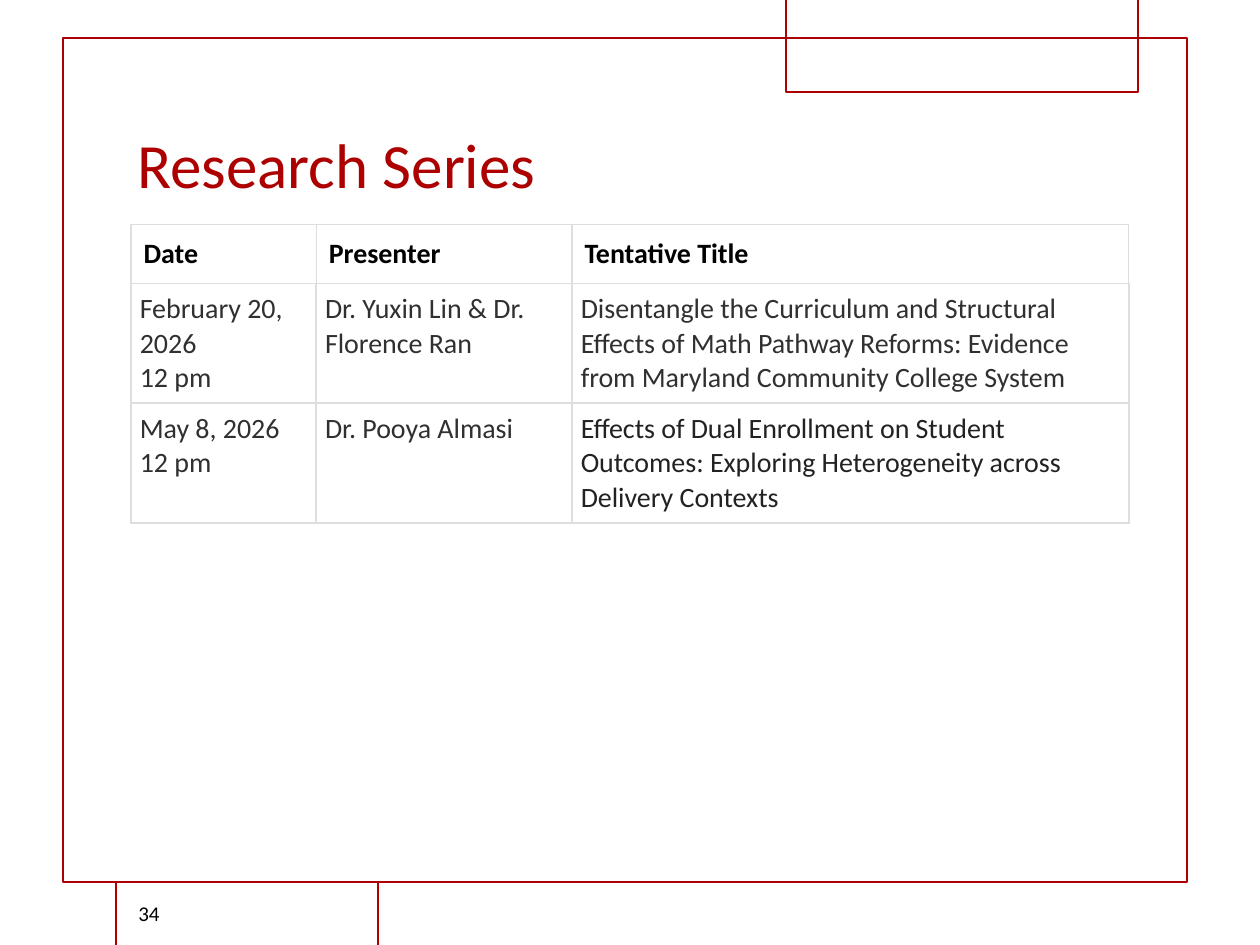
from lxml import etree
from pptx import Presentation
from pptx.dml.color import RGBColor
from pptx.enum.shapes import MSO_SHAPE
from pptx.enum.text import MSO_ANCHOR, MSO_AUTO_SIZE, PP_ALIGN
from pptx.oxml.ns import qn
from pptx.util import Inches, Pt

RECTANGLE = MSO_SHAPE.RECTANGLE
BOTTOM, MIDDLE, TOP = MSO_ANCHOR.BOTTOM, MSO_ANCHOR.MIDDLE, MSO_ANCHOR.TOP
NO_AUTOFIT = MSO_AUTO_SIZE.NONE
LEFT = PP_ALIGN.LEFT
TITLE_ONLY_LAYOUT = 5

FONT = "Calibri"
RED = RGBColor(0xAD, 0x01, 0x01)
WHITE = RGBColor(0xFF, 0xFF, 0xFF)
BLACK = RGBColor(0x00, 0x00, 0x00)
DARK_GRAY = RGBColor(0x30, 0x30, 0x30)
NEAR_BLACK = RGBColor(0x22, 0x22, 0x22)
BORDER_GRAY = RGBColor(0xDE, 0xDE, 0xE0)

COLUMN_WIDTHS = (1.47, 2.03, 4.42)
ROW_HEIGHTS = (0.47, 0.95, 0.95)
HEADERS = ("Date", "Presenter", "Tentative Title")
TALKS = (
    (
        "February 20, 2026\n12 pm",
        "Dr. Yuxin Lin & Dr. Florence Ran",
        "Disentangle the Curriculum and Structural Effects of Math Pathway Reforms: "
        "Evidence from Maryland Community College System",
    ),
    (
        "May 8, 2026\n12 pm",
        "Dr. Pooya Almasi",
        "Effects of Dual Enrollment on Student Outcomes: "
        "Exploring Heterogeneity across Delivery Contexts",
    ),
)


def write_text(text_frame, text, size=16, color=BLACK, bold=False, anchor=None):
    """Fill a text frame with one paragraph per line of text."""
    text_frame.text = text
    text_frame.word_wrap = True
    if anchor is not None:
        text_frame.vertical_anchor = anchor
    for paragraph in text_frame.paragraphs:
        paragraph.alignment = LEFT
        font = paragraph.font
        font.name, font.size, font.bold = FONT, Pt(size), bold
        font.color.rgb = color


def add_frame(slide, left, top, width, height, fill=None):
    """Draw one red-outlined rectangle of the page frame."""
    shape = slide.shapes.add_shape(
        RECTANGLE, Inches(left), Inches(top), Inches(width), Inches(height)
    )
    shape.shadow.inherit = False
    shape.line.color.rgb = RED
    shape.line.width = Pt(1.25)
    if fill is None:
        shape.fill.background()
    else:
        shape.fill.solid()
        shape.fill.fore_color.rgb = fill


def place_title(slide, left, top, width, height):
    """Format the title placeholder and bring it in front of the frame."""
    title = slide.shapes.title
    title.left, title.top = Inches(left), Inches(top)
    title.width, title.height = Inches(width), Inches(height)
    write_text(title.text_frame, "Research Series", size=36, color=RED, anchor=BOTTOM)
    title.text_frame.auto_size = NO_AUTOFIT
    title.element.getparent().append(title.element)


def add_page_number(slide, left, top, width, height):
    """Add the page number at the foot of the slide."""
    box = slide.shapes.add_textbox(
        Inches(left), Inches(top), Inches(width), Inches(height)
    )
    write_text(box.text_frame, "34", size=12, anchor=MIDDLE)


def set_borders(cell, width):
    """Give a table cell a thin gray border on every side."""
    properties = cell._tc.get_or_add_tcPr()
    for side in ("a:lnL", "a:lnR", "a:lnT", "a:lnB"):
        line = etree.SubElement(properties, qn(side), w=str(Pt(width)))
        fill = etree.SubElement(line, qn("a:solidFill"))
        etree.SubElement(fill, qn("a:srgbClr"), val=str(BORDER_GRAY))


def format_cell(cell, text, margin, border, **text_format):
    """Write a cell and set its margins, borders and fill."""
    write_text(cell.text_frame, text, **text_format)
    cell.vertical_anchor = TOP
    cell.margin_left = cell.margin_right = Inches(margin)
    cell.margin_top = cell.margin_bottom = Inches(margin)
    set_borders(cell, border)
    cell.fill.solid()
    cell.fill.fore_color.rgb = WHITE


def add_schedule(slide, left, top):
    """Add the table of talks with its top left corner at the given place."""
    table = slide.shapes.add_table(
        len(ROW_HEIGHTS), len(COLUMN_WIDTHS), Inches(left), Inches(top),
        Inches(sum(COLUMN_WIDTHS)), Inches(sum(ROW_HEIGHTS)),
    ).table
    table.horz_banding = False
    for column, width in zip(table.columns, COLUMN_WIDTHS):
        column.width = Inches(width)
    for row, height in zip(table.rows, ROW_HEIGHTS):
        row.height = Inches(height)
    for index, header in enumerate(HEADERS):
        format_cell(table.cell(0, index), header, 0.1, 0.75, bold=True)
    for row_index, talk in enumerate(TALKS, start=1):
        for index, text in enumerate(talk):
            format_cell(table.cell(row_index, index), text, 0.07, 1, color=DARK_GRAY)
    last_title = table.cell(len(TALKS), len(HEADERS) - 1)
    for paragraph in last_title.text_frame.paragraphs:
        paragraph.font.color.rgb = NEAR_BLACK


def main():
    """Build the slide and save it."""
    presentation = Presentation()
    presentation.slide_width, presentation.slide_height = Inches(10), Inches(7.5)
    slide = presentation.slides.add_slide(
        presentation.slide_layouts[TITLE_ONLY_LAYOUT]
    )
    add_frame(slide, 0.5, 0.3, 8.92, 6.7, fill=WHITE)
    add_frame(slide, 0.92, 7, 2.08, 0.51, fill=WHITE)
    add_frame(slide, 6.24, -0.01, 2.79, 0.74)
    place_title(slide, 0.99, 0.82, 8.02, 0.83)
    add_page_number(slide, 1, 7.05, 0.67, 0.4)
    add_schedule(slide, 1.04, 1.78)
    presentation.save("out.pptx")


if __name__ == "__main__":
    main()
